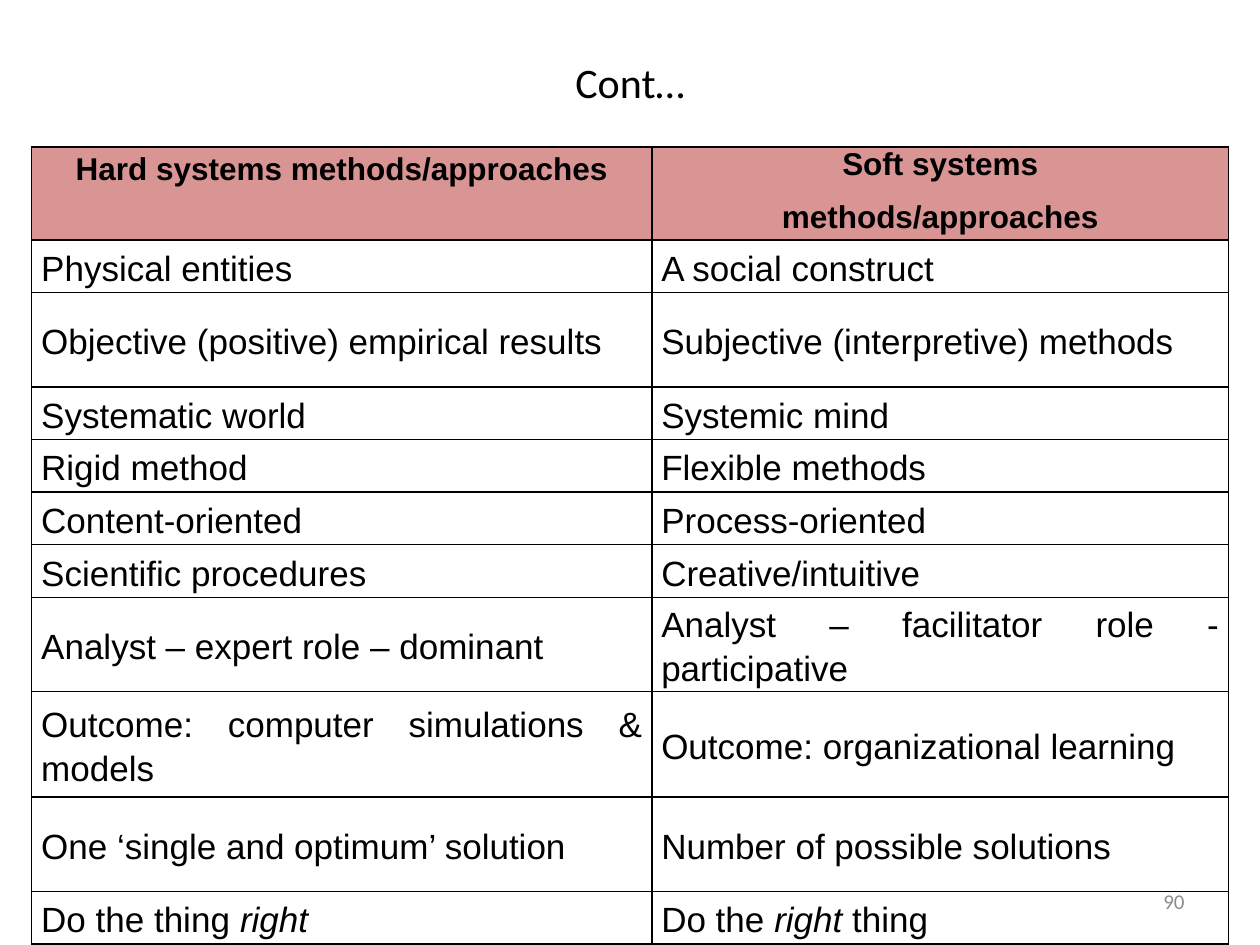
from pptx import Presentation
from pptx import util as u
from pptx.dml.color import RGBColor
from pptx.enum import text as t
from pptx.oxml import parse_xml
from pptx.oxml.ns import nsdecls

# Content: a newline splits paragraphs, asterisks enclose italics
TITLE = "Cont…"
NUMBER = "90"
HEAD = ("Hard systems methods/approaches", "Soft systems\nmethods/approaches")
BODY = [
    ("Physical entities", "A social construct"),
    ("Objective (positive) empirical results", "Subjective (interpretive) methods"),
    ("Systematic world", "Systemic mind"),
    ("Rigid method", "Flexible methods"),
    ("Content-oriented", "Process-oriented"),
    ("Scientific procedures", "Creative/intuitive"),
    ("Analyst – expert role – dominant", "Analyst – facilitator role - participative"),
    ("Outcome: computer simulations & models", "Outcome: organizational learning"),
    ("One ‘single and optimum’ solution", "Number of possible solutions"),
    ("Do the thing *right*", "Do the *right* thing"),
]
COLS = (12.5, 11.63)
LOW, TALL = 1.06, 1.9
ROWS = [1.88, LOW, TALL, LOW, LOW, LOW, LOW, TALL, 2.13, TALL, LOW]
HEX = {"ink": "000000", "head": "D99594", "number": "8C8C8C"}


def style(par, face, size, color, align):
    par.alignment = align
    par.font.name = face
    par.font.size = u.Pt(size)
    par.font.color.rgb = RGBColor.from_string(HEX[color])


def border(cell):
    props = cell._tc.get_or_add_tcPr()
    for i, side in enumerate(("lnL", "lnR", "lnT", "lnB")):
        props.insert(i, parse_xml(
            f'<a:{side} {nsdecls("a")} w="12700"><a:solidFill>'
            f'<a:srgbClr val="{HEX["ink"]}"/></a:solidFill></a:{side}>'))


def fill_cell(cell, words, head):
    cell.margin_left = cell.margin_right = u.Cm(0.19)
    cell.margin_top = cell.margin_bottom = 0
    cell.vertical_anchor = t.MSO_ANCHOR.TOP if head else t.MSO_ANCHOR.MIDDLE
    if head:
        cell.fill.solid()
        cell.fill.fore_color.rgb = RGBColor.from_string(HEX["head"])
    else:
        cell.fill.background()
    border(cell)
    lines = words.split("\n")
    frame = cell.text_frame
    for i, line in enumerate(lines):
        par = frame.add_paragraph() if i else frame.paragraphs[0]
        style(par, "Arial", 18 if head else 20, "ink",
              t.PP_ALIGN.CENTER if head else t.PP_ALIGN.JUSTIFY)
        par.font.bold = head
        par.space_after = u.Pt(10)
        if len(lines) == 1:
            par.line_spacing = 1.15
        for j, part in enumerate(line.split("*")):
            if part:
                run = par.add_run()
                run.text = part
                if j % 2:
                    run.font.italic = True


deck = Presentation()
deck.slide_width, deck.slide_height = u.Cm(25.4), u.Cm(19.05)
slide = deck.slides.add_slide(deck.slide_layouts[5])

# Title
title = slide.shapes.title
title.left, title.top = u.Cm(1.27), u.Cm(0.76)
title.width, title.height = u.Cm(22.86), u.Cm(1.78)
title.text = TITLE
title.text_frame.vertical_anchor = t.MSO_ANCHOR.MIDDLE
style(title.text_frame.paragraphs[0], "Calibri", 24, "ink", t.PP_ALIGN.CENTER)

# Comparison table
table = slide.shapes.add_table(len(ROWS), len(COLS), u.Cm(0.64), u.Cm(2.96),
                               u.Cm(sum(COLS)), u.Cm(sum(ROWS))).table
table.horz_banding = False
for col, width in zip(table.columns, COLS):
    col.width = u.Cm(width)
for r, (row, tall) in enumerate(zip(table.rows, ROWS)):
    row.height = u.Cm(tall)
    for cell, words in zip(row.cells, [HEAD, *BODY][r]):
        fill_cell(cell, words, r == 0)

# Slide number
box = slide.shapes.add_textbox(u.Cm(18.2), u.Cm(17.66), u.Cm(5.93), u.Cm(1.01))
box.text_frame.word_wrap = True
box.text_frame.vertical_anchor = t.MSO_ANCHOR.MIDDLE
box.text_frame.text = NUMBER
style(box.text_frame.paragraphs[0], "Calibri", 12, "number", t.PP_ALIGN.RIGHT)

deck.save("out.pptx")
